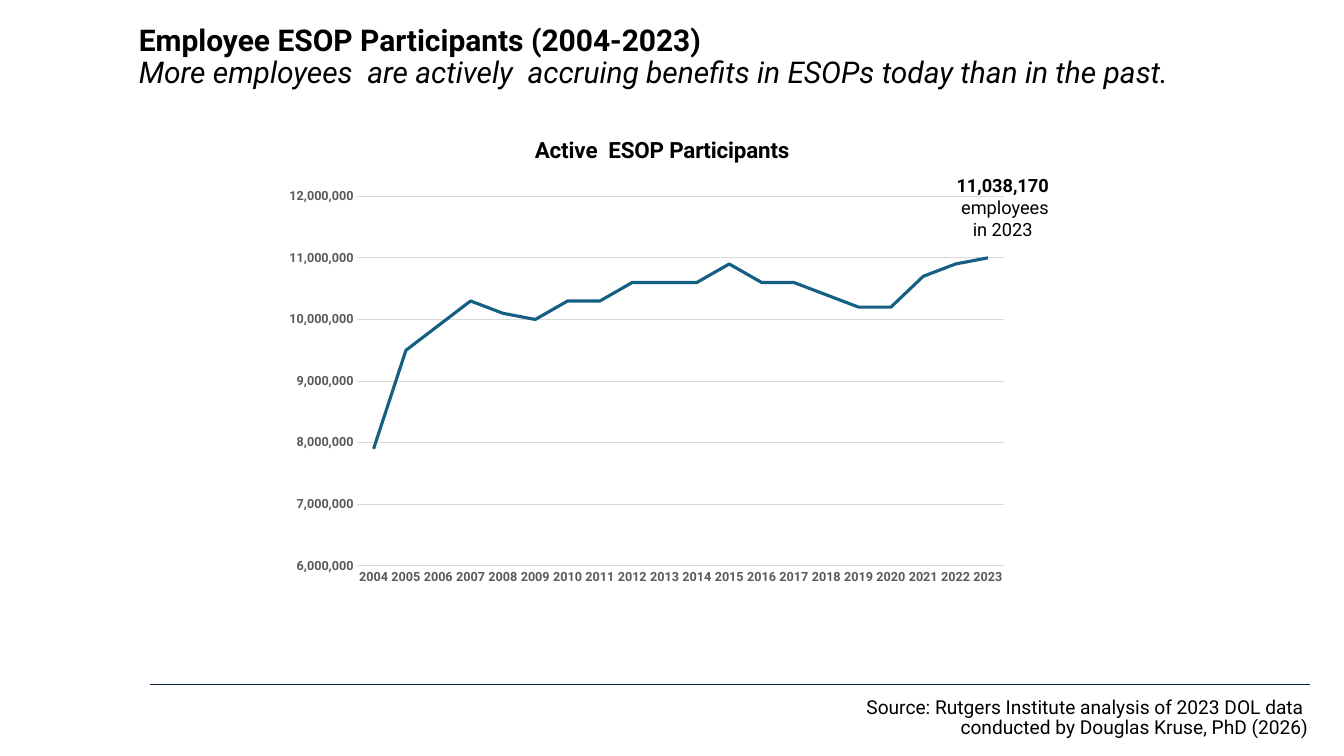
from lxml.etree import SubElement
from pptx import Presentation
from pptx.chart.data import CategoryChartData
from pptx.dml.color import RGBColor
from pptx.enum.chart import XL_CHART_TYPE as ChartType, XL_TICK_MARK as Tick
from pptx.enum.text import MSO_ANCHOR as Anchor, PP_ALIGN as Align
from pptx.oxml import parse_xml
from pptx.oxml.ns import nsdecls, qn
from pptx.util import Cm, Pt


def color(hex_string):
    return RGBColor.from_string(hex_string)


def add_text(lines, left, top, width, height, size, styles=(), align=Align.LEFT,
             anchor=Anchor.TOP, spacing=1.0):
    """Add one paragraph per line; styles holds a (bold, italic) pair per line."""
    frame = slide.shapes.add_textbox(Cm(left), Cm(top), Cm(width), Cm(height)).text_frame
    frame.word_wrap = True
    frame.vertical_anchor = anchor
    frame.text = "\n".join(lines)
    for index, paragraph in enumerate(frame.paragraphs):
        paragraph.alignment = align
        paragraph.line_spacing = spacing
        font = paragraph.runs[0].font
        font.name, font.size = "Roboto", Pt(size)
        font.color.rgb = color("000000")
        font.bold, font.italic = styles[index] if styles else (False, False)


deck = Presentation()
deck.slide_width, deck.slide_height = Cm(33.87), Cm(19.05)
slide = deck.slides.add_slide(deck.slide_layouts[6])

# Footer rule
footer_rule = slide.shapes.add_connector(1, Cm(3.78), Cm(17.25), Cm(33.02), Cm(17.25))
footer_rule.line.color.rgb = color("0E2841")
footer_rule.line.width = Pt(0.75)
SubElement(footer_rule._element.spPr, qn("a:effectLst"))

# Heading
add_text(["Employee ESOP Participants (2004-2023)",
          "More employees  are actively  accruing benefits in ESOPs today than in the past."],
         3.25, 0.28, 29.08, 2.36, 21.4, styles=[(True, False), (False, True)],
         anchor=Anchor.MIDDLE, spacing=0.9)

# Participants per year, in millions
participants = [7.9, 9.5, 9.9, 10.3, 10.1, 10.0, 10.3, 10.3, 10.6, 10.6,
                10.6, 10.9, 10.6, 10.6, 10.4, 10.2, 10.2, 10.7, 10.9, 11.0]
chart_data = CategoryChartData(number_format="#,##0")
chart_data.categories = [str(year) for year in range(2004, 2024)]
chart_data.add_series("Series 1", [round(value * 1_000_000) for value in participants])
chart = slide.shapes.add_chart(ChartType.LINE, Cm(5.49), Cm(3.05), Cm(20.22), Cm(13.64),
                               chart_data).chart
chart.has_legend = False
chart.font.name, chart.font.size, chart.font.bold = "Roboto", Pt(10), True
chart.font.color.rgb = color("000000")
chart.plots[0].vary_by_categories = False

trend = chart.plots[0].series[0]
trend.smooth = False
trend.format.line.color.rgb = color("156082")
trend.format.line.width = Pt(2.25)

# Chart title
chart.chart_title.text_frame.text = "Active  ESOP Participants"
title_font = chart.chart_title.text_frame.paragraphs[0].runs[0].font
title_font.name, title_font.size, title_font.bold = "Roboto", Pt(16), True
title_font.color.rgb = color("000000")

# Axes
years, counts = chart.category_axis, chart.value_axis
for axis in (years, counts):
    axis.major_tick_mark = axis.minor_tick_mark = Tick.NONE
    label_font = axis.tick_labels.font
    label_font.name, label_font.size, label_font.bold = "Roboto", Pt(9), True
    label_font.color.rgb = color("595959")
counts.minimum_scale, counts.maximum_scale = 6_000_000, 12_000_000
counts.major_unit = 1_000_000
counts.tick_labels.number_format = "#,##0"
counts.tick_labels.number_format_is_linked = False
counts.format.line.fill.background()
for line in (years.format.line, counts.major_gridlines.format.line):
    line.color.rgb = color("D9D9D9")
    line.width = Pt(0.75)

# Fixed places of the chart title and the plot, as fractions of the chart
plot_area = chart._chartSpace.xpath("c:chart/c:plotArea")[0]
placements = [
    (chart.chart_title._element, 1, {"x": 0.39, "y": 0.02}),
    (plot_area, 0, {"x": 0.174, "y": 0.139, "w": 0.806, "h": 0.683}),
]
for part, position, fractions in placements:
    for old_layout in part.findall(qn("c:layout")):
        part.remove(old_layout)
    layout = parse_xml(f"<c:layout {nsdecls('c')}><c:manualLayout/></c:layout>")
    manual = layout[0]
    if part is plot_area:
        SubElement(manual, qn("c:layoutTarget")).set("val", "inner")
    for key in ("x", "y"):
        SubElement(manual, qn(f"c:{key}Mode")).set("val", "edge")
    for key, fraction in fractions.items():
        SubElement(manual, qn(f"c:{key}")).set("val", str(fraction))
    part.insert(position, layout)

# Callout for the last year
add_text(["11,038,170 ", "employees", "in 2023 "], 23.24, 4.27, 4.17, 1.93, 13,
         styles=[(True, False), (False, False), (False, False)], align=Align.CENTER)

# Source
add_text(["Source: Rutgers Institute analysis of 2023 DOL data ",
          "conducted by Douglas Kruse, PhD (2026)"],
         4.14, 16.92, 29.08, 2.36, 13.7, align=Align.RIGHT, anchor=Anchor.MIDDLE, spacing=0.9)

deck.save("out.pptx")
